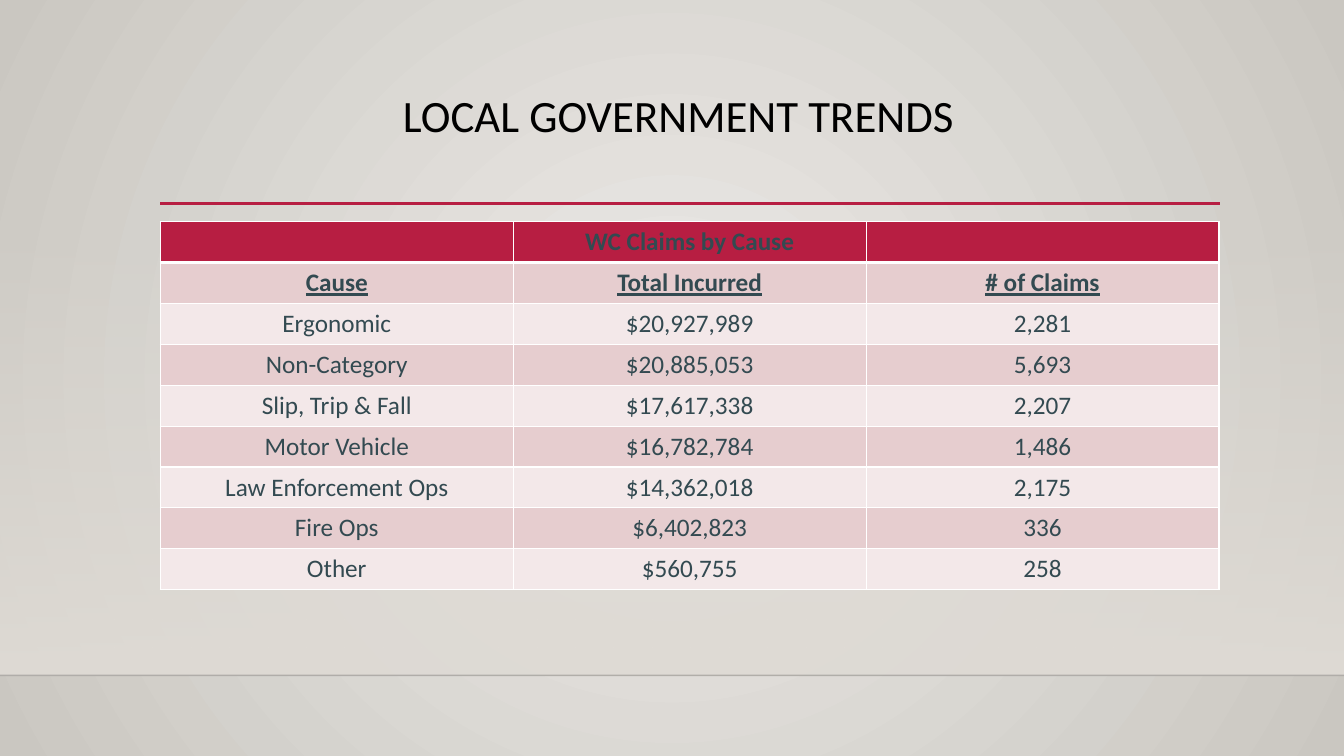
from lxml.etree import SubElement
from pptx import Presentation
from pptx.dml.color import RGBColor
from pptx.enum.shapes import MSO_CONNECTOR as Connector, MSO_SHAPE as Shape
from pptx.enum.text import MSO_ANCHOR as Anchor, MSO_AUTO_SIZE as AutoSize, PP_ALIGN as Align
from pptx.oxml import parse_xml
from pptx.oxml.ns import nsdecls, qn
from pptx.util import Inches, Pt

CRIMSON, SLATE, WHITE, SAND = "B71E42", "334A51", "FFFFFF", "DFDBD5"
BANDS = ("E6CDCF", "F3E8E9")
LEFT, WIDTH = 1.59, 10.5
CLAIMS = [
    ("", "WC Claims by Cause", ""),
    ("Cause", "Total Incurred", "# of Claims"),
    ("Ergonomic", "$20,927,989", "2,281"),
    ("Non-Category", "$20,885,053", "5,693"),
    ("Slip, Trip & Fall", "$17,617,338", "2,207"),
    ("Motor Vehicle", "$16,782,784", "1,486"),
    ("Law Enforcement Ops", "$14,362,018", "2,175"),
    ("Fire Ops", "$6,402,823", "336"),
    ("Other", "$560,755", "258"),
]


def rgb(code):
    return RGBColor.from_string(code)


def set_all(target, values):
    for name, value in values.items():
        setattr(target, name, value)


def write(para, text, color, **font):
    para.alignment = Align.CENTER
    span = para.add_run()
    span.text = text
    span.font.color.rgb = rgb(color)
    set_all(span.font, {"name": "Calibri", **font})


def set_gradient(fill, start, end):
    fill.gradient()
    for stop, color in zip(fill.gradient_stops, (start, end)):
        stop.color.rgb = rgb(color)


def set_alpha(color_element, percent):
    SubElement(color_element, qn("a:alpha")).set("val", str(percent * 1000))


def paint_background(page):
    set_gradient(page.background.fill, "ECEAE7", "CAC7C1")
    gradient = page.element.find(".//" + qn("p:bg")).find(".//" + qn("a:gradFill"))
    # Turn the linear gradient into one that spreads from the centre
    circle = parse_xml(
        f'<a:path {nsdecls("a")} path="circle">'
        '<a:fillToRect l="50000" t="50000" r="50000" b="50000"/></a:path>')
    gradient.replace(gradient.find(qn("a:lin")), circle)


def add_fading_band(page, top, height):
    band = page.shapes.add_shape(
        Shape.RECTANGLE, 0, Inches(top), Inches(13.33), Inches(height))
    band.shadow.inherit = False
    band.line.fill.background()
    set_gradient(band.fill, SAND, SAND)
    band.fill.gradient_angle = 270
    first_stop = band.element.spPr.find(".//" + qn("a:srgbClr"))
    set_alpha(first_stop, 0)


def add_rule(page, left, right, y, color, weight, alpha=100):
    rule = page.shapes.add_connector(
        Connector.STRAIGHT, Inches(left), Inches(y), Inches(right), Inches(y))
    rule.line.color.rgb = rgb(color)
    rule.line.width = Pt(weight)
    properties = rule.element.spPr
    if alpha < 100:
        set_alpha(properties.find(".//" + qn("a:srgbClr")), alpha)
    SubElement(properties, qn("a:effectLst"))


def set_title(page, text):
    title = page.shapes.title
    set_all(title, {"left": Inches(LEFT), "top": Inches(0.88),
                    "width": Inches(WIDTH), "height": Inches(1.15)})
    frame = title.text_frame
    set_all(frame, {"word_wrap": True, "auto_size": AutoSize.NONE,
                    "vertical_anchor": Anchor.TOP, "margin_right": Inches(0.32)})
    para = frame.paragraphs[0]
    para.line_spacing = 0.9
    write(para, text, "000000", size=Pt(32))


def set_borders(cell, **weights):
    properties = cell._tc.get_or_add_tcPr()
    for index, side in enumerate("LRTB"):
        properties.insert(index, parse_xml(
            f'<a:ln{side} {nsdecls("a")} w="{Pt(weights.get(side, 1))}"><a:solidFill>'
            f'<a:srgbClr val="{WHITE}"/></a:solidFill></a:ln{side}>'))


def add_claims_table(page, top, height):
    table = page.shapes.add_table(
        len(CLAIMS), len(CLAIMS[0]), Inches(LEFT), Inches(top),
        Inches(WIDTH), Inches(height)).table
    for row, values in enumerate(CLAIMS):
        for column, text in enumerate(values):
            cell = table.cell(row, column)
            cell.fill.solid()
            cell.fill.fore_color.rgb = rgb(BANDS[(row - 1) % 2] if row else CRIMSON)
            # The header is set off by a heavy line below it
            set_borders(cell, **{0: {"B": 3}, 1: {"T": 3}}.get(row, {}))
            if text:
                write(cell.text_frame.paragraphs[0], text, SLATE,
                      size=Pt(18), bold=row < 2, underline=row == 1)


def main():
    deck = Presentation()
    set_all(deck, {"slide_width": Inches(13.33), "slide_height": Inches(7.5)})
    page = deck.slides.add_slide(deck.slide_layouts.get_by_name("Title Only"))

    # Backdrop
    paint_background(page)
    add_fading_band(page, 2.21, 4.49)
    add_rule(page, 0, 13.33, 6.7, "000001", 1, alpha=20)

    # Title and table
    add_rule(page, LEFT, 12.1, 2.02, CRIMSON, 2.5)
    set_title(page, "LOCAL GOVERNMENT TRENDS")
    add_claims_table(page, 2.2, 3.65)
    deck.save("out.pptx")


if __name__ == "__main__":
    main()
